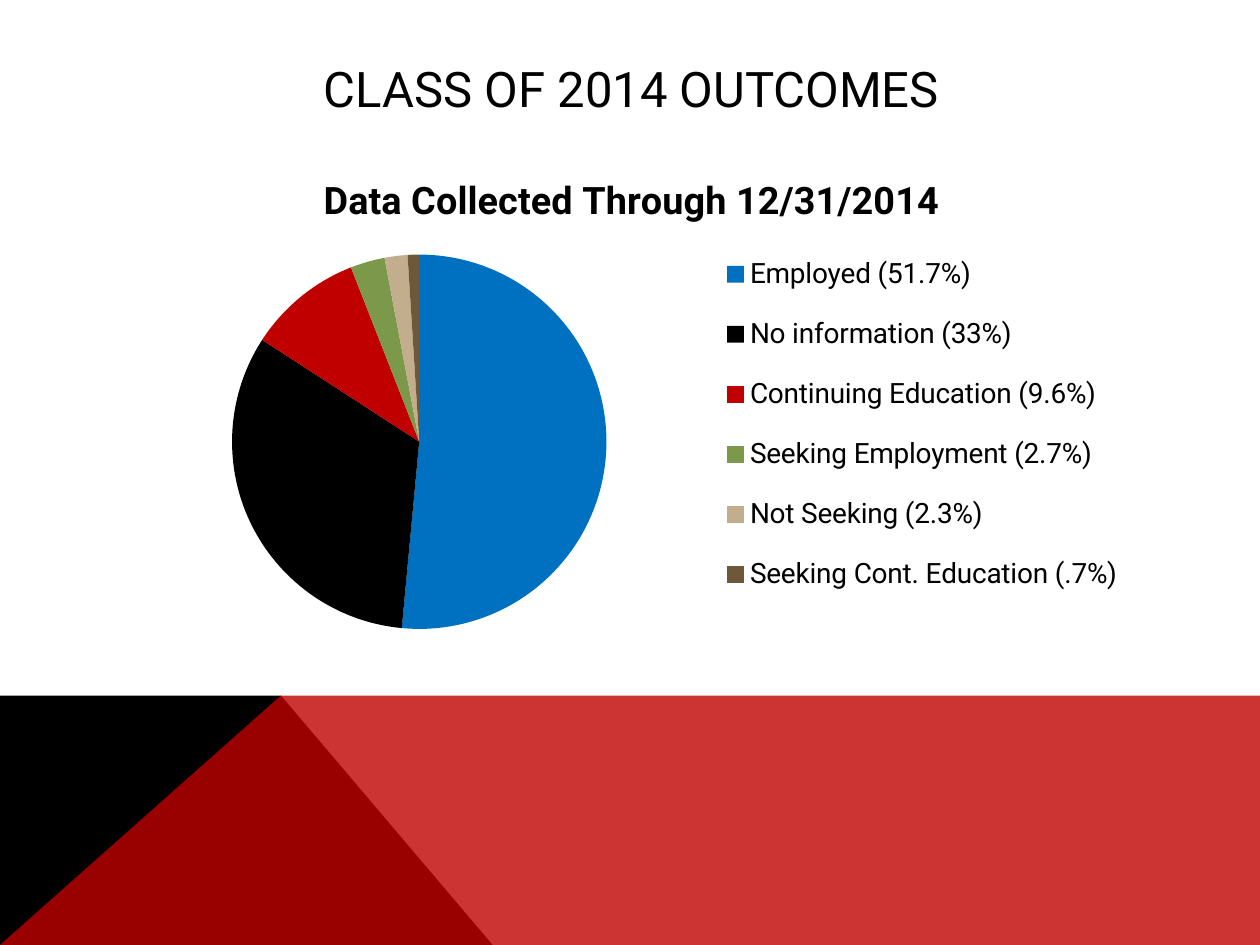
from lxml.etree import SubElement
from pptx import Presentation
from pptx.chart.data import CategoryChartData
from pptx.dml.color import RGBColor
from pptx.enum.chart import XL_CHART_TYPE, XL_LEGEND_POSITION
from pptx.enum.text import MSO_ANCHOR, PP_ALIGN
from pptx.oxml.ns import qn
from pptx.util import Inches, Pt

WIDTH, HEIGHT = 10, 7.5
BAND_TOP, PEAK = 5.52, 2.23
FONT = "Roboto"
BLACK = RGBColor(0x00, 0x00, 0x00)
RED = RGBColor(0xC0, 0x00, 0x00)
BLUE = RGBColor(0x00, 0x70, 0xC0)
GREEN = RGBColor(0x7C, 0x98, 0x4A)
TAN = RGBColor(0xC2, 0xAD, 0x8D)
BROWN = RGBColor(0x6D, 0x59, 0x3A)

CHART_TITLE = "Data Collected Through 12/31/2014"
OUTCOMES = [
    ("Employed (51.7%)", 52, BLUE),
    ("No information (33%)", 33, BLACK),
    ("Continuing Education (9.6%)", 10, RED),
    ("Seeking Employment (2.7%)", 3, GREEN),
    ("Not Seeking (2.3%)", 2, TAN),
    ("Seeking Cont. Education (.7%)", 1, BROWN),
]


def set_font(font, size, bold=False):
    font.name, font.size, font.bold = FONT, Pt(size), bold
    font.color.rgb = BLACK


def add_band(slide, points, color, opacity=100):
    """Draw a filled outline through points given in inches."""
    start, *rest = [(Inches(x), Inches(y)) for x, y in points]
    builder = slide.shapes.build_freeform(*start, scale=1.0)
    builder.add_line_segments(rest, close=True)
    band = builder.convert_to_shape()
    band.shadow.inherit = False
    band.line.fill.background()
    band.fill.solid()
    band.fill.fore_color.rgb = color
    if opacity < 100:
        tint = band.fill._xPr.find(".//" + qn("a:srgbClr"))
        SubElement(tint, qn("a:alpha"), val=str(opacity * 1000))


def add_title(slide, text):
    box = slide.shapes.add_textbox(Inches(0.9), Inches(0.4), Inches(8.22), Inches(0.6))
    frame = box.text_frame
    frame.word_wrap = True
    frame.vertical_anchor = MSO_ANCHOR.MIDDLE
    para = frame.paragraphs[0]
    para.text = text
    para.alignment = PP_ALIGN.CENTER
    set_font(para.font, 28)


def place(element, index, inner=False, **shares):
    """Fix a chart part at x, y, w, h, given as shares of the chart's size."""
    for old in element.findall(qn("c:layout")):
        element.remove(old)
    layout = element.makeelement(qn("c:layout"))
    element.insert(index, layout)
    manual = SubElement(layout, qn("c:manualLayout"))
    if inner:
        SubElement(manual, qn("c:layoutTarget"), val="inner")
    for axis in "xy":
        SubElement(manual, qn(f"c:{axis}Mode"), val="edge")
    for name, share in shares.items():
        SubElement(manual, qn(f"c:{name}"), val=str(share))


def add_outcome_pie(slide):
    labels, values, colors = zip(*OUTCOMES)
    data = CategoryChartData()
    data.categories = labels
    data.add_series(CHART_TITLE, values)
    chart = slide.shapes.add_chart(
        XL_CHART_TYPE.PIE, Inches(0.9), Inches(1.2), Inches(8.23), Inches(3.91), data
    ).chart
    set_font(chart.font, 18)

    chart.has_title = True
    para = chart.chart_title.text_frame.paragraphs[0]
    para.text = CHART_TITLE
    set_font(para.font, 21.6, bold=True)

    chart.has_legend = True
    chart.legend.position = XL_LEGEND_POSITION.RIGHT
    chart.legend.include_in_layout = False
    set_font(chart.legend.font, 16)

    plot = chart.plots[0]
    plot.vary_by_categories = True
    for index, color in enumerate(colors):
        fill = plot.series[0].points[index].format.fill
        fill.solid()
        fill.fore_color.rgb = color

    root = chart._chartSpace
    place(root.find(".//" + qn("c:plotArea")), 0, inner=True, x=0.11, y=0.21, w=0.37, h=0.76)
    place(root.find(".//" + qn("c:legend")), 1, x=0.57, y=0.16, w=0.42, h=0.79)


def main():
    deck = Presentation()
    deck.slide_width, deck.slide_height = Inches(WIDTH), Inches(HEIGHT)
    slide = deck.slides.add_slide(deck.slide_layouts[6])
    add_band(slide, [(0, HEIGHT), (0, BAND_TOP), (PEAK, BAND_TOP), (3.91, HEIGHT)], BLACK)
    add_band(
        slide,
        [(0, HEIGHT), (PEAK, BAND_TOP), (WIDTH, BAND_TOP), (WIDTH, HEIGHT)],
        RED,
        opacity=80,
    )
    add_title(slide, "CLASS OF 2014 OUTCOMES")
    add_outcome_pie(slide)
    deck.save("out.pptx")


if __name__ == "__main__":
    main()
